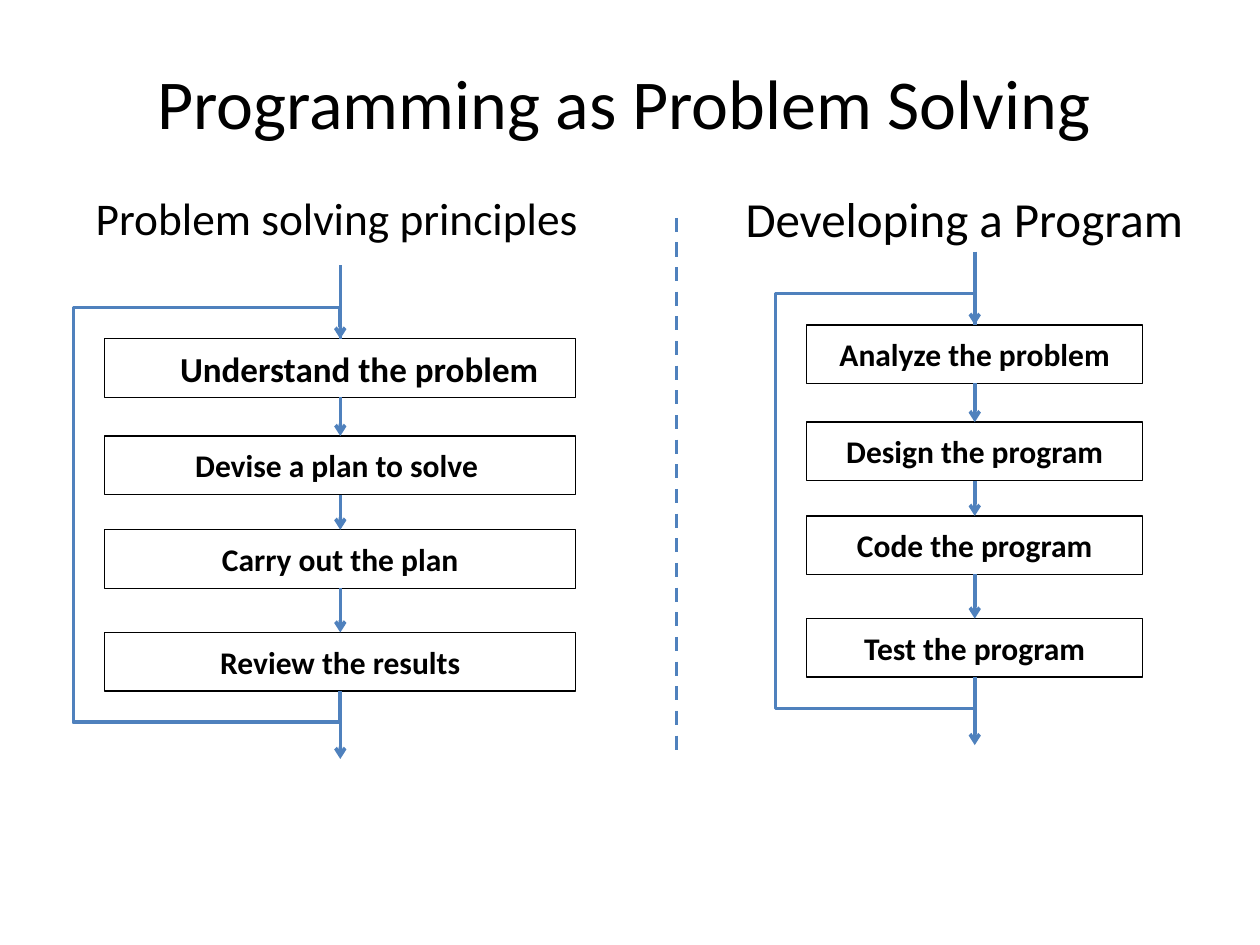
from dataclasses import dataclass
from itertools import pairwise

from lxml import etree
from pptx import Presentation
from pptx.dml.color import RGBColor
from pptx.enum.dml import MSO_LINE_DASH_STYLE as Dash
from pptx.enum.shapes import MSO_CONNECTOR as Conn, MSO_SHAPE as Shape
from pptx.enum.text import MSO_ANCHOR as Anchor, PP_ALIGN as Align
from pptx.oxml.ns import qn
from pptx.util import Cm, Pt

COLORS = {"ink": "000000", "flow": "4F81BD"}
FONT = "Calibri"
BOX_H = 1.18
BOX_OFFSETS = (0, 1.96, 3.85, 5.92)  # tops of the steps below the first one
ENTRY, LOOP_GAP, EXIT = 1.48, 0.63, 1.37
TOP, BOTTOM = 0, 2  # connection sites of a rectangle


@dataclass
class Heading:
    text: str
    left: float
    top: float
    width: float
    height: float
    size: float
    align: Align = Align.LEFT
    anchor: Anchor = Anchor.TOP


@dataclass
class Step:
    text: str
    size: float = 18
    indent: float | None = None  # left-aligned at this indent, else centred


@dataclass
class Flow:
    left: float
    top: float
    width: float
    steps: list[Step]


HEADINGS = [
    Heading("Programming as Problem Solving", 0.56, 1.27, 24.03, 1.55, 40,
            Align.CENTER, Anchor.MIDDLE),
    Heading("Problem solving principles", 1.68, 3.71, 10.41, 1.63, 25.9),
    Heading("Developing a Program", 14.78, 3.68, 9.5, 1.63, 28),
]
FLOWS = [
    Flow(2.11, 6.83, 9.5, [
        Step("Understand the problem", 20, 1.27),
        Step("Devise a plan to solve "),
        Step("Carry out the plan"),
        Step("Review the results"),
    ]),
    Flow(16.26, 6.55, 6.78, [
        Step("Analyze the problem"),
        Step("Design the program"),
        Step("Code the program"),
        Step("Test the program"),
    ]),
]


def rgb(name: str) -> RGBColor:
    return RGBColor.from_string(COLORS[name])


def set_text(sp, text: str, size: float, align: Align, anchor: Anchor, bold=False):
    tf = sp.text_frame
    tf.word_wrap = True
    tf.vertical_anchor = anchor
    p = tf.paragraphs[0]
    p.text = text
    p.alignment = align
    p.font.name, p.font.size, p.font.bold = FONT, Pt(size), bold
    p.font.color.rgb = rgb("ink")
    return p


def add_heading(slide, h: Heading) -> None:
    sp = slide.shapes.add_textbox(Cm(h.left), Cm(h.top), Cm(h.width), Cm(h.height))
    set_text(sp, h.text, h.size, h.align, h.anchor)


def style_flow_line(line, arrow: bool) -> None:
    line.color.rgb = rgb("flow")
    line.width = Pt(2)
    if arrow:
        ln = line._get_or_add_ln()
        etree.SubElement(ln, qn("a:tailEnd")).set("type", "arrow")


def add_line(slide, x: float, y1: float, y2: float, arrow=False):
    cx = slide.shapes.add_connector(Conn.STRAIGHT, Cm(x), Cm(y1), Cm(x), Cm(y2))
    style_flow_line(cx.line, arrow)
    etree.SubElement(cx._element.spPr, qn("a:effectLst"))
    return cx


def add_step(slide, flow: Flow, step: Step, y: float):
    sp = slide.shapes.add_shape(Shape.RECTANGLE, Cm(flow.left), Cm(y),
                                Cm(flow.width), Cm(BOX_H))
    sp.shadow.inherit = False
    sp.fill.background()
    sp.line.color.rgb = rgb("ink")
    sp.line.width = Pt(0.75)
    align = Align.CENTER if step.indent is None else Align.LEFT
    p = set_text(sp, step.text, step.size, align, Anchor.MIDDLE, bold=True)
    if step.indent is not None:
        p._p.get_or_add_pPr().set("marL", str(Cm(step.indent)))
    return sp


def add_loop(slide, flow: Flow, x: float, bottom: float) -> None:
    side, low, high = flow.left - LOOP_GAP, bottom + LOOP_GAP, flow.top - LOOP_GAP
    points = [(x, low), (side, low), (side, high), (x, high), (x, flow.top)]
    fb = slide.shapes.build_freeform(Cm(x), Cm(bottom))
    fb.add_line_segments([(Cm(px), Cm(py)) for px, py in points], close=False)
    sp = fb.convert_to_shape()
    sp.shadow.inherit = False
    sp.fill.background()
    style_flow_line(sp.line, arrow=True)


def add_flow(slide, flow: Flow) -> None:
    x = flow.left + flow.width / 2
    tops = [flow.top + dy for dy in BOX_OFFSETS]
    bottom = tops[-1] + BOX_H
    boxes = [add_step(slide, flow, s, y) for s, y in zip(flow.steps, tops)]

    # Arrows from step to step
    for (box, y), (next_box, next_y) in pairwise(zip(boxes, tops)):
        cx = add_line(slide, x, y + BOX_H, next_y, arrow=True)
        cx.begin_connect(box, BOTTOM)
        cx.end_connect(next_box, TOP)

    # Way back to the first step, then the way in and out
    add_loop(slide, flow, x, bottom)
    add_line(slide, x, flow.top - ENTRY, flow.top).end_connect(boxes[0], TOP)
    add_line(slide, x, bottom, bottom + EXIT, arrow=True).begin_connect(boxes[-1], BOTTOM)


def main() -> None:
    prs = Presentation()
    prs.slide_width, prs.slide_height = Cm(25.4), Cm(19.05)
    slide = prs.slides.add_slide(prs.slide_layouts[6])

    for heading in HEADINGS:
        add_heading(slide, heading)

    # Divider between the two flows
    add_line(slide, 13.64, 4.39, 15.29).line.dash_style = Dash.DASH

    for flow in FLOWS:
        add_flow(slide, flow)

    prs.save("out.pptx")


if __name__ == "__main__":
    main()
